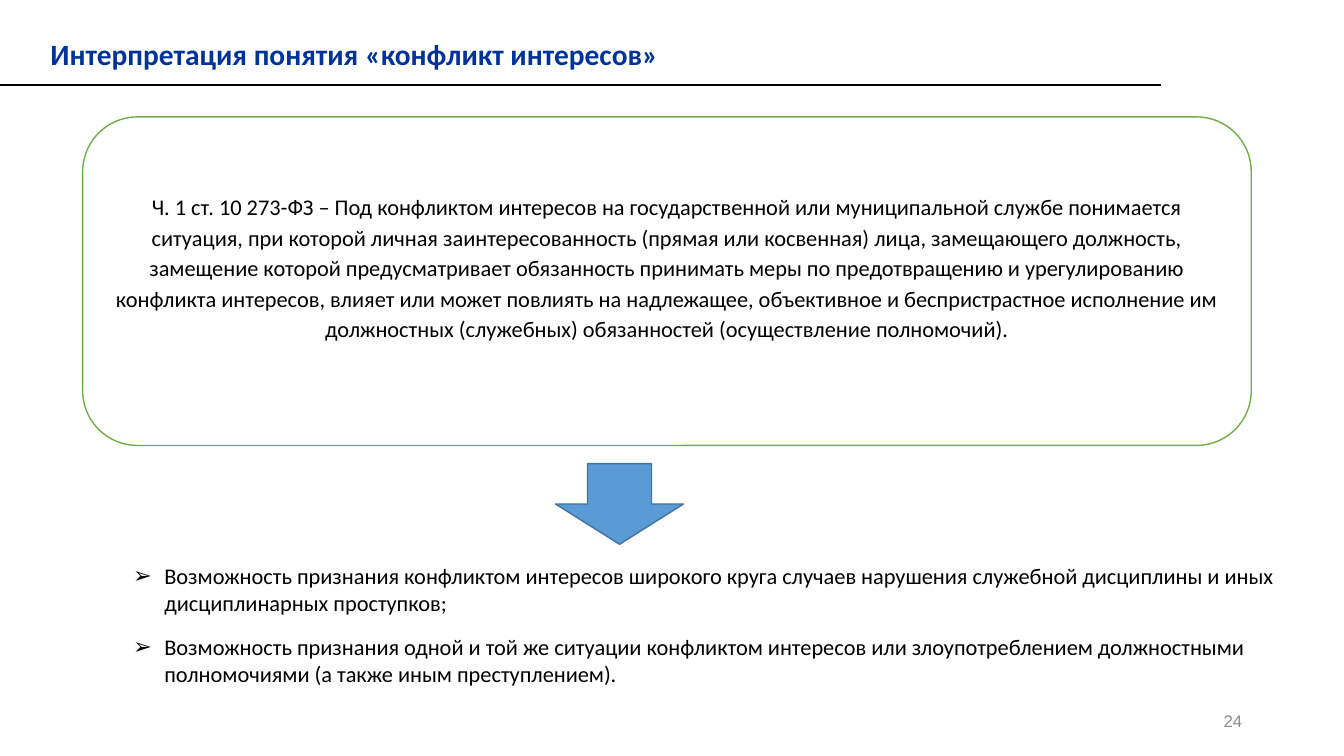
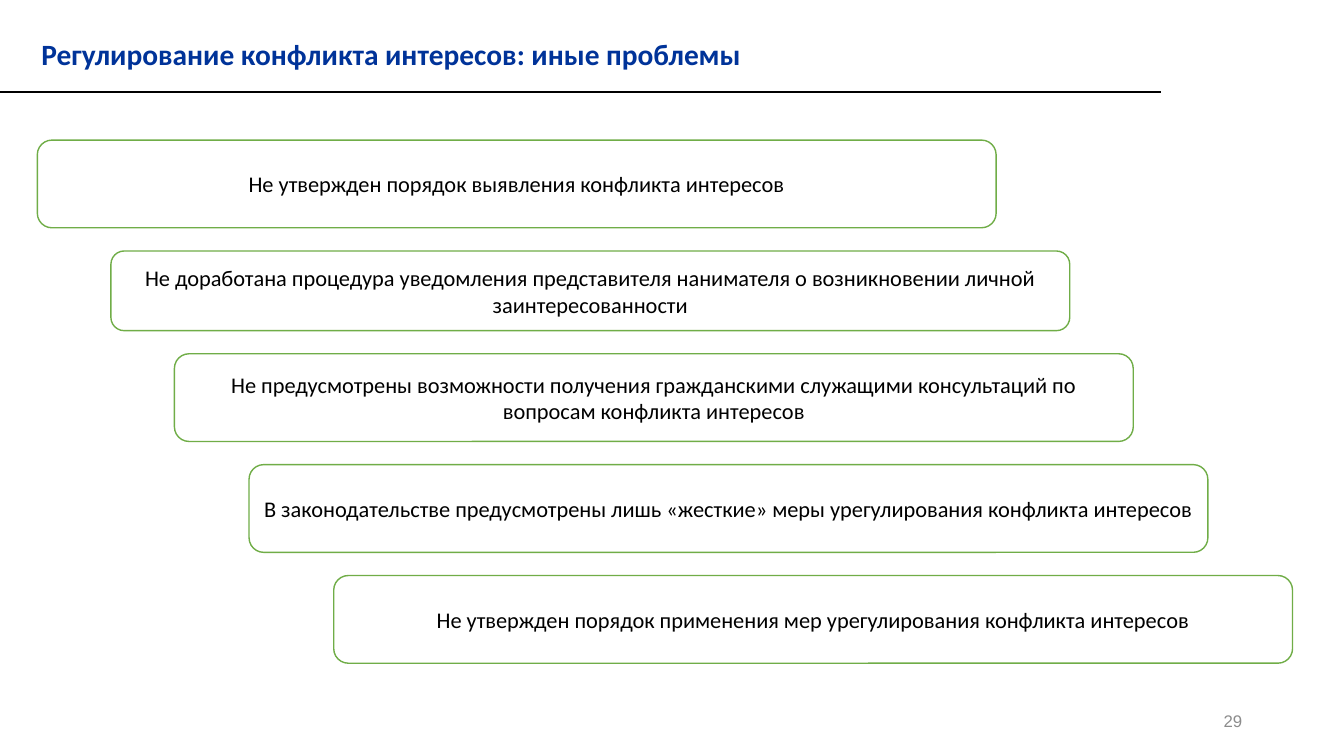
from dataclasses import dataclass

from lxml import etree
from pptx import Presentation
from pptx.dml.color import RGBColor
from pptx.enum.shapes import MSO_CONNECTOR, MSO_SHAPE
from pptx.enum.text import MSO_ANCHOR, MSO_AUTO_SIZE, PP_ALIGN
from pptx.oxml.ns import qn
from pptx.util import Emu, Pt

LINE = MSO_CONNECTOR.STRAIGHT
ROUND, ARROW = MSO_SHAPE.ROUNDED_RECTANGLE, MSO_SHAPE.DOWN_ARROW
TOP, MIDDLE = MSO_ANCHOR.TOP, MSO_ANCHOR.MIDDLE
LEFT, CENTER, RIGHT = PP_ALIGN.LEFT, PP_ALIGN.CENTER, PP_ALIGN.RIGHT
NO_FIT = MSO_AUTO_SIZE.NONE
BODY_LAYOUT, TITLE_LAYOUT = 1, 5
SCALE = 9144


@dataclass(frozen=True)
class Style:
    size: int
    color: str
    face: str = "Calibri"
    bold: bool = False


@dataclass(frozen=True)
class Theme:
    title: Style = Style(21, "003399", bold=True)
    text: Style = Style(16, "000000")
    page: Style = Style(12, "8C8C8C", face="Arial")
    rule: str = "000000"
    paper: str = "FFFFFF"
    border: str = "70AD47"
    arrow: str = "5B9BD5"
    edge: str = "43739E"


@dataclass(frozen=True)
class Box:
    left: int
    top: int
    width: int
    height: int


@dataclass(frozen=True)
class Step:
    left: int
    height: int
    text: str


THEME = Theme()
STEP_TOP, STEP_WIDTH, STEP_GAP = 139, 951, 23
STEPS = (
    Step(37, 87, "Не утвержден порядок выявления конфликта интересов"),
    Step(110, 79, "Не доработана процедура уведомления представителя нанимателя о возникновении личной заинтересованности"),
    Step(173, 87, "Не предусмотрены возможности получения гражданскими служащими консультаций по вопросам конфликта интересов"),
    Step(247, 87, "В законодательстве предусмотрены лишь «жесткие» меры урегулирования конфликта интересов"),
    Step(331, 87, "Не утвержден порядок применения мер урегулирования конфликта интересов"),
)
CLAUSE = (
    "Ч. 1 ст. 10 273-ФЗ – Под конфликтом интересов на государственной или муниципальной службе "
    "понимается ситуация, при которой личная заинтересованность (прямая или косвенная) лица, "
    "замещающего должность, замещение которой предусматривает обязанность принимать меры по "
    "предотвращению и урегулированию конфликта интересов, влияет или может повлиять на надлежащее, "
    "объективное и беспристрастное исполнение им должностных (служебных) обязанностей "
    "(осуществление полномочий)."
)
RISKS = (
    "Возможность признания конфликтом интересов широкого круга случаев нарушения служебной "
    "дисциплины и иных дисциплинарных проступков;",
    "Возможность признания одной и той же ситуации конфликтом интересов или злоупотреблением "
    "должностными полномочиями (а также иным преступлением).",
)


def px(count: int) -> Emu:
    return Emu(count * SCALE)


def rgb(code: str) -> RGBColor:
    return RGBColor.from_string(code)


def span(box: Box) -> tuple[Emu, ...]:
    return px(box.left), px(box.top), px(box.width), px(box.height)


def place(shape, box: Box) -> None:
    shape.left, shape.top, shape.width, shape.height = span(box)


def write(frame, texts: tuple[str, ...], style: Style, align, anchor) -> None:
    frame.word_wrap = True
    frame.auto_size = NO_FIT
    frame.vertical_anchor = anchor
    frame.text = "\n".join(texts)
    for para in frame.paragraphs:
        para.alignment = align
        para.space_before = Pt(0)
        font = para.font
        font.name, font.size, font.bold = style.face, Pt(style.size), style.bold
        font.color.rgb = rgb(style.color)


def add_shape(slide, kind, box: Box, fill: str, edge: str):
    shape = slide.shapes.add_shape(kind, *span(box))
    shape.shadow.inherit = False
    shape.fill.solid()
    shape.fill.fore_color.rgb = rgb(fill)
    shape.line.color.rgb = rgb(edge)
    shape.line.width = Pt(1)
    return shape


def add_card(slide, box: Box, text: str):
    card = add_shape(slide, ROUND, box, THEME.paper, THEME.border)
    write(card.text_frame, (text,), THEME.text, CENTER, MIDDLE)
    return card


def add_rule(slide, top: int) -> None:
    rule = slide.shapes.add_connector(LINE, px(0), px(top), px(1152), px(top))
    rule.line.color.rgb = rgb(THEME.rule)
    rule.line.width = Pt(1.5)
    etree.SubElement(rule._element.spPr, qn("a:effectLst"))


def add_list(slide, box: Box, items: tuple[str, ...]) -> None:
    body = slide.placeholders[1]
    place(body, box)
    write(body.text_frame, items, THEME.text, LEFT, TOP)
    for para in body.text_frame.paragraphs:
        para.space_after = Pt(12)
        props = para._p.get_or_add_pPr()
        props.set("marL", str(px(31)))
        props.set("indent", str(px(-31)))
        mark = etree.Element(qn("a:buChar"), char="➢")
        props.find(qn("a:defRPr")).addprevious(mark)


def add_slide(deck, layout: int, title: str, left: int, rule: int, page: int):
    slide = deck.slides.add_slide(deck.slide_layouts[layout])
    head = slide.shapes.title
    place(head, Box(left, 31, 1096, 45))
    write(head.text_frame, (title,), THEME.title, LEFT, TOP)
    add_rule(slide, rule)
    foot = slide.shapes.add_textbox(*span(Box(942, 695, 300, 40)))
    write(foot.text_frame, (str(page),), THEME.page, RIGHT, MIDDLE)
    return slide


def add_meaning(deck) -> None:
    slide = add_slide(deck, BODY_LAYOUT, "Интерпретация понятия «конфликт интересов»", 40, 84, 24)
    card = add_card(slide, Box(82, 116, 1159, 326), CLAUSE)
    card.text_frame.margin_bottom = px(35)
    card.text_frame.paragraphs[0].line_spacing = 1.14
    add_shape(slide, ARROW, Box(551, 460, 127, 80), THEME.arrow, THEME.edge)
    add_list(slide, Box(122, 553, 1172, 135), RISKS)


def add_issues(deck) -> None:
    slide = add_slide(deck, TITLE_LAYOUT, "Регулирование конфликта интересов: иные проблемы", 31, 91, 29)
    top = STEP_TOP
    for step in STEPS:
        add_card(slide, Box(step.left, top, STEP_WIDTH, step.height), step.text)
        top += step.height + STEP_GAP


def main() -> None:
    deck = Presentation()
    deck.slide_width, deck.slide_height = px(1333), px(750)
    add_meaning(deck)
    add_issues(deck)
    deck.save("out.pptx")


if __name__ == "__main__":
    main()
